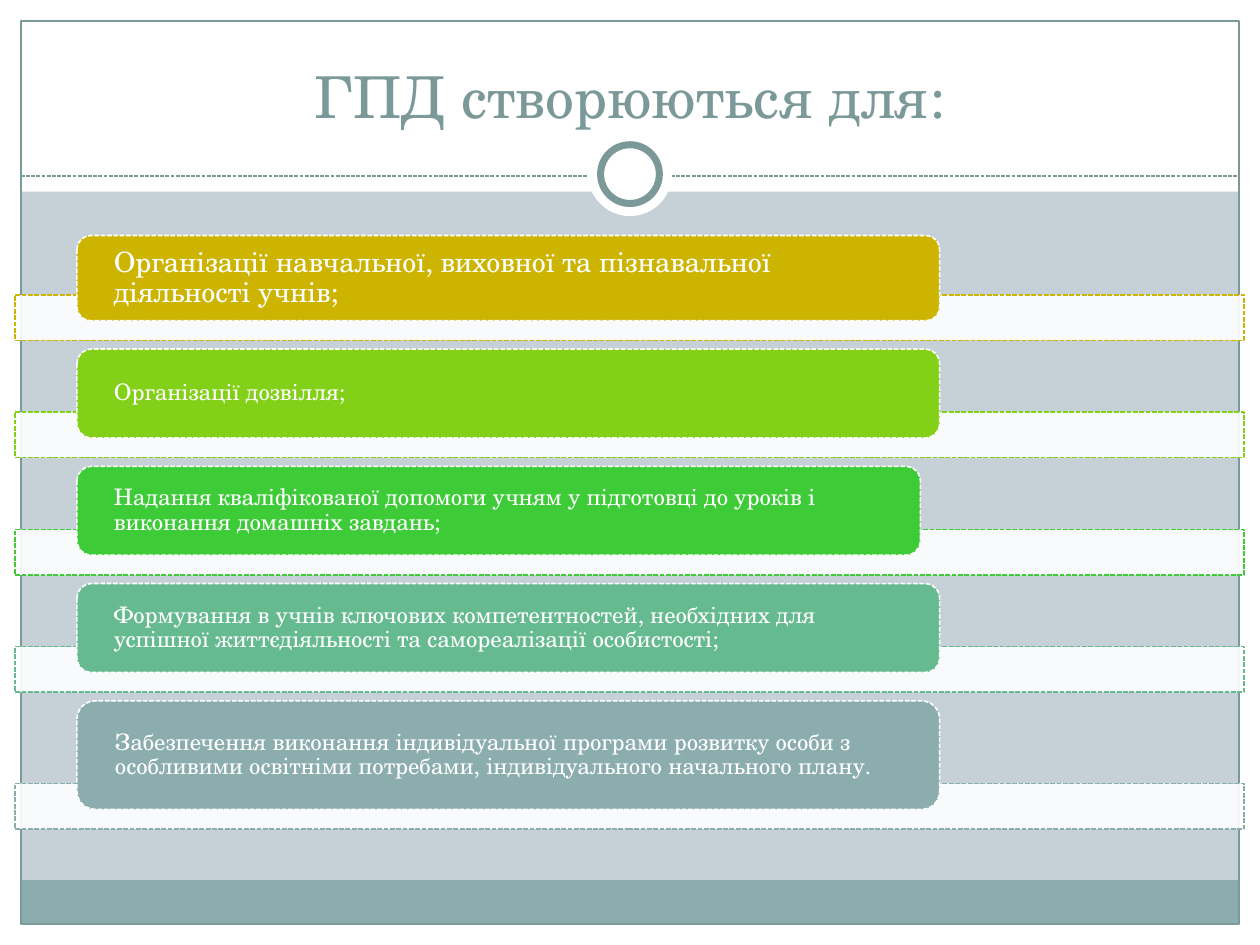
from pptx import Presentation
from pptx.dml.color import RGBColor
from pptx.enum.dml import MSO_LINE as Dash
from pptx.enum.shapes import MSO_CONNECTOR as Conn, MSO_SHAPE as Kind
from pptx.enum.text import MSO_ANCHOR as Anchor, MSO_AUTO_SIZE as Fit, PP_ALIGN as Align
from pptx.oxml.ns import qn
from pptx.util import Pt
from lxml import etree

FONT = "TeX Gyre Schola"
WHITE = RGBColor(0xFF, 0xFF, 0xFF)
BACK = RGBColor(0xC5, 0xD1, 0xD7)
TEAL = RGBColor(0x7C, 0x99, 0x9A)
GOLD = RGBColor(0xCC, 0xB4, 0x00)
LIME = RGBColor(0x83, 0xD0, 0x18)
GREEN = RGBColor(0x3E, 0xCB, 0x38)
MINT = RGBColor(0x65, 0xBA, 0x8F)
SAGE = RGBColor(0x8C, 0xAD, 0xAE)

deck = Presentation()
deck.slide_width, deck.slide_height = Pt(720), Pt(540)
slide = deck.slides.add_slide(deck.slide_layouts[5])
slide.background.fill.solid()
slide.background.fill.fore_color.rgb = BACK


def draw(kind, box, fill=None, edge=None, width=0.75, dash=None):
    shape = slide.shapes.add_shape(kind, *map(Pt, box))
    shape.shadow.inherit = False
    if fill is None:
        shape.fill.background()
    else:
        shape.fill.solid()
        shape.fill.fore_color.rgb = fill
    if edge is None:
        shape.line.fill.background()
    else:
        shape.line.color.rgb = edge
        shape.line.width = Pt(width)
        shape.line.dash_style = dash
    return shape


def style(frame, size, color, looks):
    for key, value in looks.items():
        setattr(frame, key, value)
    font = frame.paragraphs[0].runs[0].font
    for key, value in {"name": FONT, "size": Pt(size), "bold": False}.items():
        setattr(font, key, value)
    font.color.rgb = color


# White margins, bottom band and frame
for box in [(0, 528, 720, 12), (0, 0, 720, 109.5), (0, 0, 12, 540), (708, 0, 12, 540)]:
    draw(Kind.RECTANGLE, box, WHITE)
draw(Kind.RECTANGLE, (12, 503, 696, 25), SAGE)
draw(Kind.RECTANGLE, (12, 12, 696, 516), None, TEAL)

# Dashed rule with the ring on it
rule = slide.shapes.add_connector(Conn.STRAIGHT, Pt(12), Pt(100.6), Pt(708), Pt(100.6))
rule.line.color.rgb = TEAL
rule.line.width = Pt(0.75)
rule.line.dash_style = Dash.SQUARE_DOT
etree.SubElement(rule._element.spPr, qn("a:effectLst"))
draw(Kind.OVAL, (336, 75.5, 48, 48), WHITE)
draw(Kind.OVAL, (343.2, 82.7, 33.6, 33.6), WHITE, TEAL, 4)

# Title, brought in front of the white margins
title = slide.shapes.title
title.left, title.top, title.width, title.height = map(Pt, (24, 18, 672, 60))
title.text_frame.text = "ГПД створюються для:"
title.text_frame.paragraphs[0].alignment = Align.CENTER
style(title.text_frame, 33, TEAL,
      {"vertical_anchor": Anchor.BOTTOM, "auto_size": Fit.NONE, "word_wrap": True})
slide.shapes._spTree.append(title._element)

# Purposes: colour, pill width, pill height, text size, text
items = [
    (GOLD, 493, 48.7, 16, "Організації навчальної, виховної та пізнавальної діяльності учнів;"),
    (LIME, 493, 50.8, 13, "Організації дозвілля;"),
    (GREEN, 482, 50.8, 13, "Надання кваліфікованої допомоги учням у підготовці до уроків "
                           "і виконання домашніх завдань;"),
    (MINT, 493, 50.8, 13, "Формування в учнів ключових компетентностей, необхідних для "
                          "успішної життєдіяльності та самореалізації особистості;"),
    (SAGE, 493, 62, 13, "Забезпечення виконання індивідуальної програми розвитку особи з "
                        "особливими освітніми потребами, індивідуального начального плану."),
]
LAP, BAR, GAP = 14.8, 26, 5
looks = {"vertical_anchor": Anchor.MIDDLE, "word_wrap": True,
         "margin_left": Pt(18.7), "margin_right": Pt(18.7),
         "margin_top": 0, "margin_bottom": 0}
top = 134.6
for color, width, height, size, text in items:
    low = top + height - LAP
    strip = draw(Kind.RECTANGLE, (8.6, low, 702.4, BAR), WHITE, color, 0.9, Dash.SQUARE_DOT)
    tint = strip._element.spPr.find(qn("a:solidFill"))[0]
    etree.SubElement(tint, qn("a:alpha"), val="90000")
    pill = draw(Kind.ROUNDED_RECTANGLE, (44, top, width, height), color, WHITE, 0.9,
                Dash.SQUARE_DOT)
    pill.text_frame.text = text
    style(pill.text_frame, size, WHITE, looks)
    para = pill.text_frame.paragraphs[0]
    para.alignment = Align.LEFT
    para.line_spacing = 0.9
    top = low + BAR + GAP

deck.save("out.pptx")
